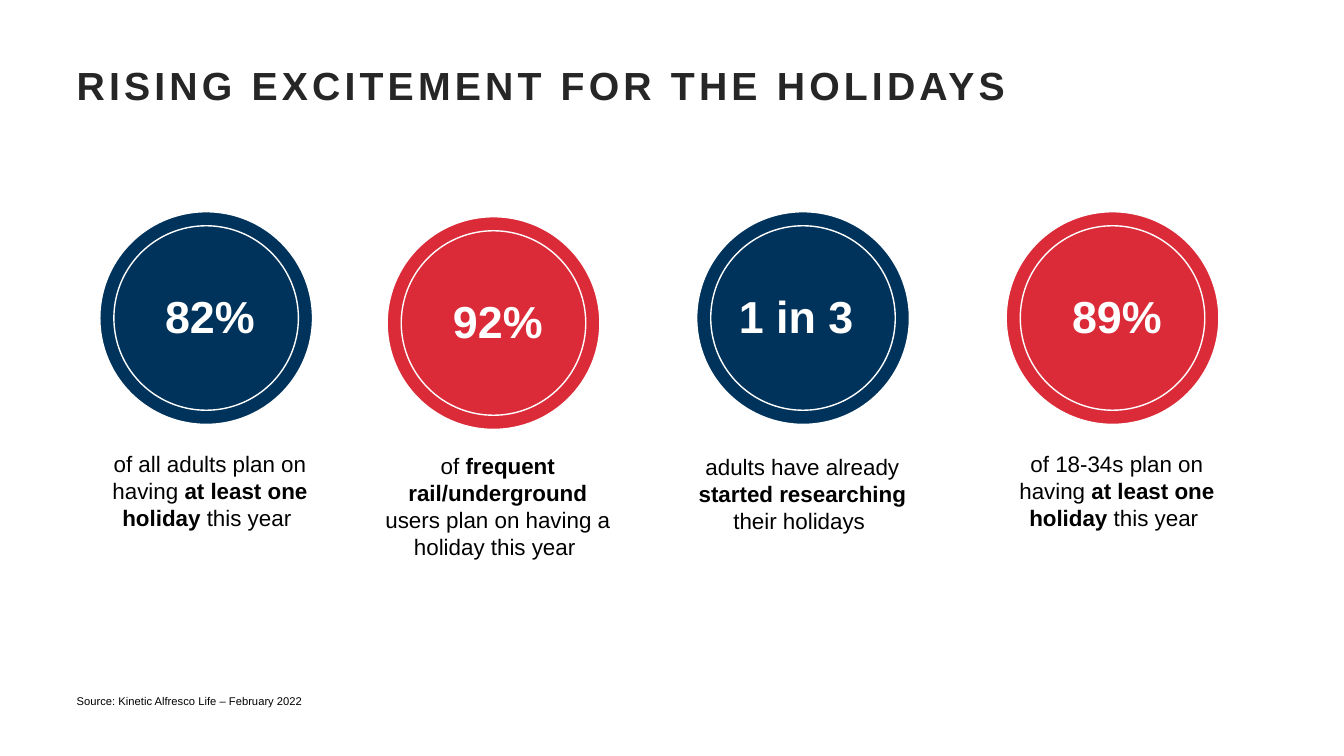
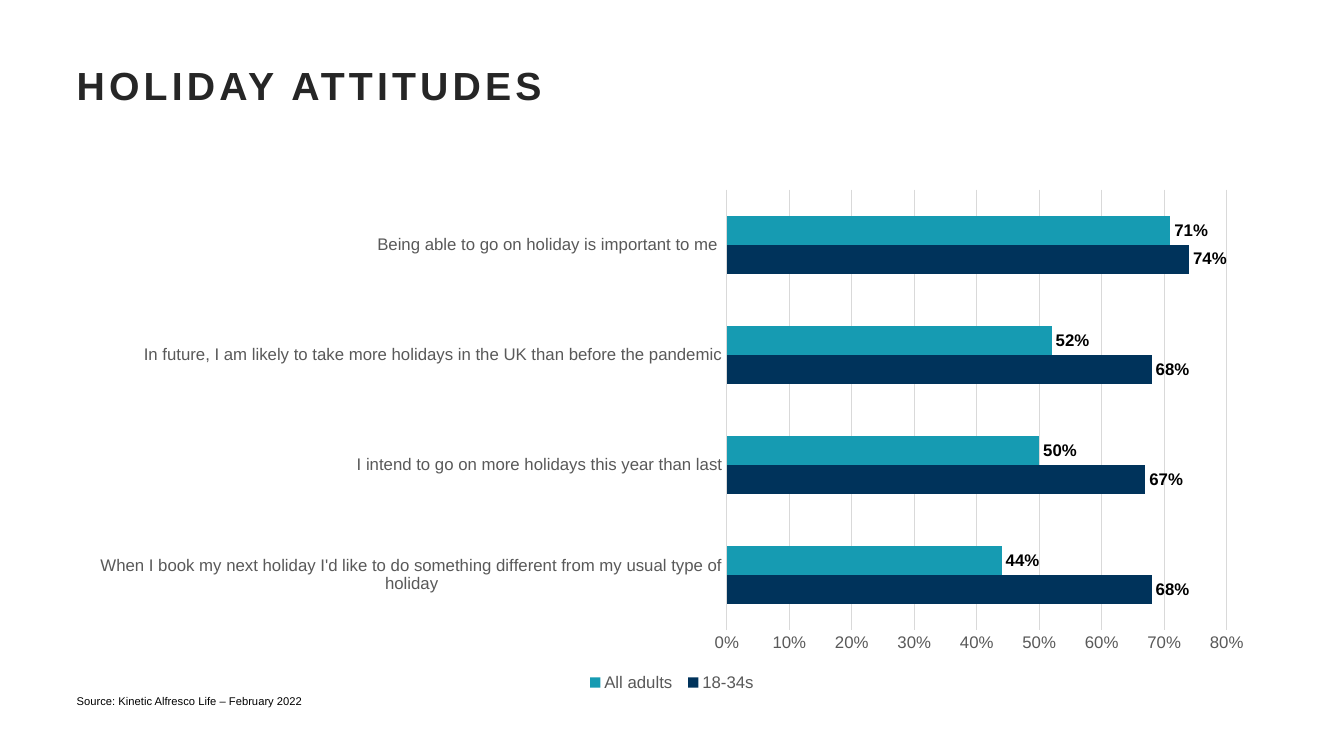
from lxml import etree
from pptx import Presentation
from pptx.chart.data import CategoryChartData
from pptx.dml.color import RGBColor
from pptx.enum.chart import XL_CHART_TYPE, XL_LABEL_POSITION, XL_LEGEND_POSITION, XL_TICK_MARK
from pptx.enum.shapes import MSO_SHAPE
from pptx.enum.text import MSO_ANCHOR, MSO_AUTO_SIZE, PP_ALIGN
from pptx.oxml.ns import qn
from pptx.util import Inches, Pt

BAR_CLUSTERED = XL_CHART_TYPE.BAR_CLUSTERED
OUTSIDE_END = XL_LABEL_POSITION.OUTSIDE_END
LEGEND_BOTTOM = XL_LEGEND_POSITION.BOTTOM
NO_TICK = XL_TICK_MARK.NONE
ELLIPSE = MSO_SHAPE.OVAL
TOP = MSO_ANCHOR.TOP
FIXED, GROW = MSO_AUTO_SIZE.NONE, MSO_AUTO_SIZE.SHAPE_TO_FIT_TEXT
LEFT, CENTER = PP_ALIGN.LEFT, PP_ALIGN.CENTER

NAVY = RGBColor(0x00, 0x33, 0x5B)
RED = RGBColor(0xDB, 0x2B, 0x38)
TEAL = RGBColor(0x16, 0x9B, 0xB2)
WHITE = RGBColor(0xFF, 0xFF, 0xFF)
BLACK = RGBColor(0x00, 0x00, 0x00)
CHARCOAL = RGBColor(0x26, 0x26, 0x26)
GREY = RGBColor(0x59, 0x59, 0x59)
PALE = RGBColor(0xD9, 0xD9, 0xD9)

FLUSH = {"margin_left": 0, "margin_right": 0, "margin_top": 0, "margin_bottom": 0,
         "word_wrap": True, "auto_size": FIXED, "vertical_anchor": TOP}
WRAPPED = {"word_wrap": True, "auto_size": GROW, "vertical_anchor": TOP}
TITLE_PARAGRAPH = {"alignment": LEFT, "line_spacing": 0.85, "space_before": Pt(0)}
SOURCE_PARAGRAPH = {"alignment": LEFT, "line_spacing": 0.9, "space_before": Pt(0)}
CENTERED = {"alignment": CENTER}

MARGIN, CONTENT_WIDTH = 5.7, 88.6
SOURCE = "Source: Kinetic Alfresco Life – February 2022"


def apply(target, formats):
    for attribute, value in formats.items():
        setattr(target, attribute, value)


def style_font(font, size, color, bold=False):
    apply(font, {"name": "Arial", "size": Pt(size), "bold": bold})
    font.color.rgb = color


def style_line(line, color, width):
    line.color.rgb = color
    line.width = Pt(width)


class Deck:
    def __init__(self):
        self.presentation = Presentation()
        apply(self.presentation, {"slide_width": Inches(13.33), "slide_height": Inches(7.5)})
        self.slide = None

    def area(self, left, top, width, height):
        across = self.presentation.slide_width / 100
        down = self.presentation.slide_height / 100
        return [round(length) for length in
                (left * across, top * down, width * across, height * down)]

    def place(self, shape, *shares):
        apply(shape, dict(zip(("left", "top", "width", "height"), self.area(*shares))))

    def add_words(self, paragraph, text, size, color, bold=False):
        run = paragraph.add_run()
        run.text = text
        style_font(run.font, size, color, bold)
        return run

    def new_slide(self, title):
        layout = self.presentation.slide_layouts[1]
        self.slide = self.presentation.slides.add_slide(layout)
        heading, source = self.slide.placeholders
        self.place(heading, MARGIN, 9.07, CONTENT_WIDTH, 14.67)
        apply(heading.text_frame, FLUSH)
        paragraph = heading.text_frame.paragraphs[0]
        apply(paragraph, TITLE_PARAGRAPH)
        run = self.add_words(paragraph, title, 28, CHARCOAL, True)
        run._r.get_or_add_rPr().set("spc", "300")

        self.place(source, MARGIN, 92, CONTENT_WIDTH, 5.2)
        apply(source.text_frame, FLUSH)
        paragraph = source.text_frame.paragraphs[0]
        properties = paragraph._p.get_or_add_pPr()
        for indent in ("marL", "indent"):
            properties.set(indent, "0")
        etree.SubElement(properties, qn("a:buNone"))
        apply(paragraph, SOURCE_PARAGRAPH)
        self.add_words(paragraph, SOURCE, 8, BLACK)

    def circle(self, center_x, center_y, diameter, color):
        ratio = self.presentation.slide_height / self.presentation.slide_width
        width = diameter * ratio
        disc = self.slide.shapes.add_shape(ELLIPSE, *self.area(
            center_x - width / 2, center_y - diameter / 2, width, diameter))
        disc.shadow.inherit = False
        disc.fill.solid()
        disc.fill.fore_color.rgb = color
        style_line(disc.line, WHITE, 1)

    def text(self, center_x, top, width, height, parts, size, color):
        frame = self.slide.shapes.add_textbox(
            *self.area(center_x - width / 2, top, width, height)).text_frame
        apply(frame, WRAPPED)
        paragraph = frame.paragraphs[0]
        apply(paragraph, CENTERED)
        for words, bold in parts:
            self.add_words(paragraph, words, size, color, bold)

    def statistic(self, circle_x, circle_y, text_x, color, figure, caption_top, lines, caption):
        for diameter in (28.13, 24.4):
            self.circle(circle_x, circle_y, diameter, color)
        self.text(text_x, circle_y - 4.5, 14.7, 8.53, [(figure, True)], 32, WHITE)
        before, strong, after = caption
        self.text(text_x, caption_top, 19.28, 1.33 + 3.6 * lines,
                  [(before, False), (strong, True), (after, False)], 16, BLACK)

    def bar_chart(self, categories, series):
        data = CategoryChartData(number_format="0%")
        data.categories = categories
        for name, values, _ in series:
            data.add_series(name, values)
        chart = self.slide.shapes.add_chart(
            BAR_CLUSTERED, *self.area(MARGIN, 23.73, CONTENT_WIDTH, 68.27), data).chart
        style_font(chart.font, 10, BLACK)
        apply(chart, {"has_title": False, "has_legend": True})
        apply(chart.legend, {"position": LEGEND_BOTTOM, "include_in_layout": False})

        plot = chart.plots[0]
        apply(plot, {"gap_width": 182, "overlap": 0, "vary_by_categories": False})
        for bars, (_, _, color) in zip(plot.series, series):
            bars.format.fill.solid()
            bars.format.fill.fore_color.rgb = color
            labels = bars.data_labels
            apply(labels, {"show_value": True, "number_format": "0%",
                           "number_format_is_linked": False, "position": OUTSIDE_END})
            style_font(labels.font, 12, BLACK, True)

        questions, shares = chart.category_axis, chart.value_axis
        for axis in (questions, shares):
            apply(axis, {"major_tick_mark": NO_TICK, "minor_tick_mark": NO_TICK})
        for labelled in (questions.tick_labels, shares.tick_labels, chart.legend):
            style_font(labelled.font, 12, GREY)
        apply(shares, {"minimum_scale": 0, "maximum_scale": 0.8, "major_unit": 0.1,
                       "has_major_gridlines": True})
        apply(shares.tick_labels, {"number_format": "0%", "number_format_is_linked": False})
        style_line(questions.format.line, PALE, 0.75)
        style_line(shares.major_gridlines.format.line, PALE, 0.75)
        shares.format.line.fill.background()


def main():
    deck = Deck()
    deck.new_slide("RISING EXCITEMENT FOR THE HOLIDAYS")
    statistics = [
        (15.34, 42.07, 15.62, NAVY, "82%", 58.93, 3,
         ("of all adults plan on having ", "at least one holiday ", "this year ")),
        (36.72, 42.73, 37.04, RED, "92%", 59.2, 4,
         ("of ", "frequent rail/underground ", "users plan on having a holiday this year ")),
        (59.75, 42.07, 59.7, NAVY, "1 in 3 ", 59.33, 3,
         ("adults have already ", "started researching ", "their holidays ")),
        (82.78, 42.07, 83.1, RED, "89%", 58.93, 3,
         ("of 18-34s plan on having ", "at least one holiday ", "this year ")),
    ]
    for statistic in statistics:
        deck.statistic(*statistic)

    deck.new_slide("HOLIDAY ATTITUDES")
    deck.bar_chart(
        ["When I book my next holiday I'd like to do something different from my usual type of holiday",
         "I intend to go on more holidays this year than last",
         "In future, I am likely to take more holidays in the UK than before the pandemic",
         "Being able to go on holiday is important to me "],
        [("18-34s", (0.68, 0.67, 0.68, 0.74), NAVY),
         ("All adults ", (0.44, 0.5, 0.52, 0.71), TEAL)])
    deck.presentation.save("out.pptx")


if __name__ == "__main__":
    main()
